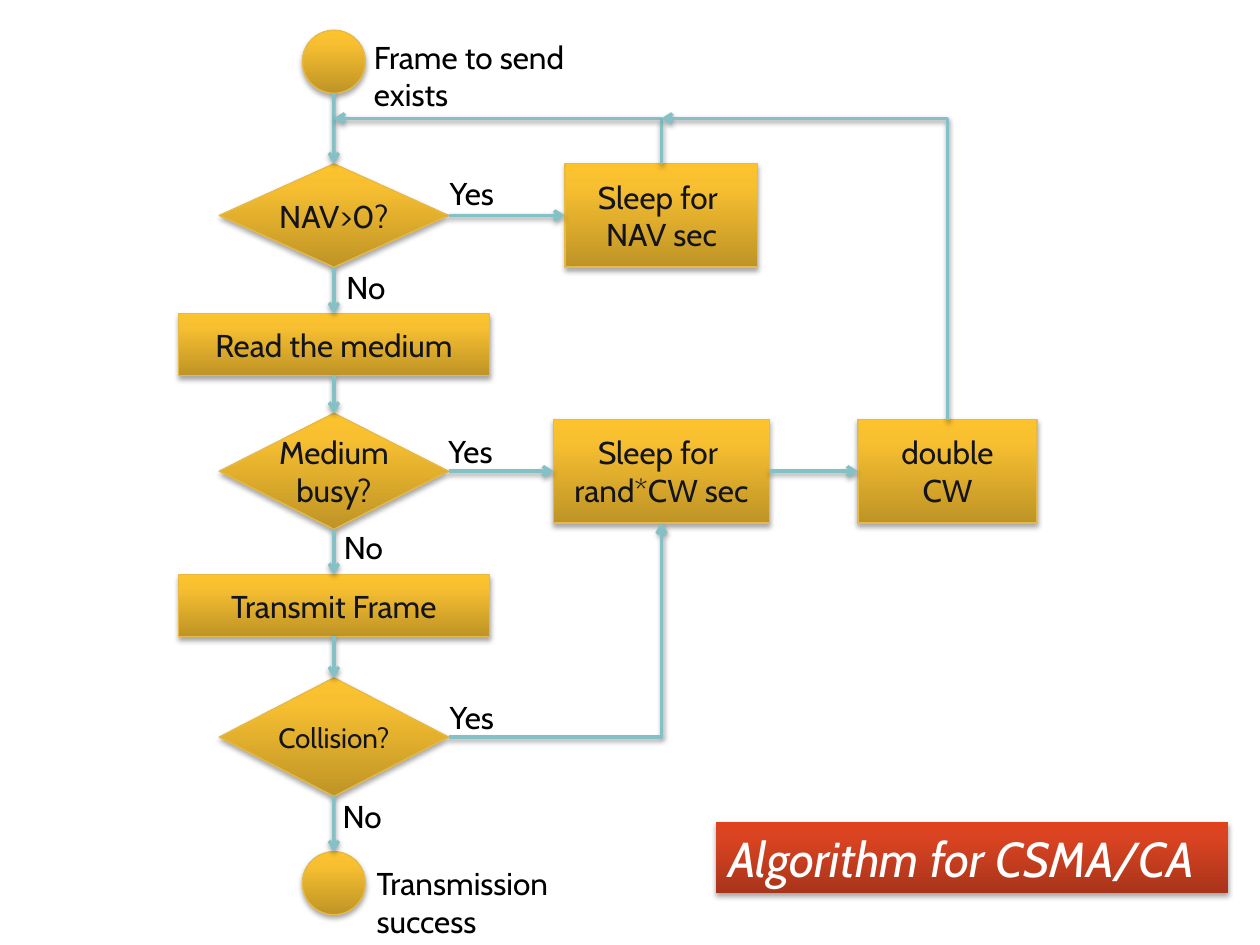
from copy import deepcopy
from dataclasses import dataclass

from lxml.etree import SubElement
from pptx import Presentation
from pptx.dml.color import RGBColor
from pptx.enum.shapes import MSO_CONNECTOR, MSO_SHAPE
from pptx.enum.text import MSO_ANCHOR, MSO_AUTO_SIZE, PP_ALIGN
from pptx.oxml.ns import qn
from pptx.util import Inches, Pt

TOP, LEFT, BOTTOM, RIGHT = range(4)
MAIN_X, SLEEP_X, DOUBLE_X = 2.65, 5.25, 7.52
RETURN_Y = 0.94
GOLD = [("BF9426", 0), ("F8C031", 0.8), ("FDC32D", 1)]
RED = [("A9341A", 0), ("DB4422", 0.8), ("E0421E", 1)]
TEAL, GOLD_EDGE, INK, BLACK, WHITE = "83C1C6", "E7BA45", "13141C", "000000", "FFFFFF"

CIRCLE = MSO_SHAPE.FLOWCHART_CONNECTOR
DECISION = MSO_SHAPE.FLOWCHART_DECISION
PROCESS = MSO_SHAPE.FLOWCHART_PROCESS


@dataclass
class Node:
    name: str
    kind: MSO_SHAPE
    center_x: float
    top: float
    width: float
    height: float
    lines: tuple = ()
    size: int = 18


@dataclass
class Label:
    text: str
    left: float
    top: float
    width: float
    wrap: bool = False


NODES = [
    Node("start", CIRCLE, MAIN_X, 0.24, 0.5, 0.5),
    Node("nav", DECISION, MAIN_X, 1.3, 1.82, 0.82, ("NAV>0?",)),
    Node("sleep nav", PROCESS, SLEEP_X, 1.3, 1.53, 0.82, ("Sleep for ", "NAV sec")),
    Node("read", PROCESS, MAIN_X, 2.49, 2.47, 0.49, ("Read the medium",)),
    Node("busy", DECISION, MAIN_X, 3.28, 1.82, 0.92, ("Medium busy?",)),
    Node("double", PROCESS, DOUBLE_X, 3.33, 1.42, 0.82, ("double", "CW")),
    Node("sleep rand", PROCESS, SLEEP_X, 3.33, 1.71, 0.82, ("Sleep for ", "rand*CW sec")),
    Node("transmit", PROCESS, MAIN_X, 4.56, 2.47, 0.49, ("Transmit Frame",)),
    Node("collision", DECISION, MAIN_X, 5.38, 1.82, 0.94, ("Collision?",), 16),
    Node("end", CIRCLE, MAIN_X, 6.76, 0.5, 0.5),
]
MAIN_FLOW = ["start", "nav", "read", "busy", "transmit", "collision", "end"]
SIDE_FLOW = [("nav", "sleep nav"), ("busy", "sleep rand"), ("sleep rand", "double")]
LABELS = [
    Label("Frame to send exists", 2.87, 0.25, 2.13, True),
    Label("Transmission success", 2.89, 6.81, 2.13, True),
    Label("Yes", 3.47, 1.33, 0.56),
    Label("Yes", 3.46, 3.38, 0.56),
    Label("Yes", 3.47, 5.49, 0.56),
    Label("No", 2.65, 2.08, 0.51),
    Label("No", 2.63, 4.14, 0.51),
    Label("No", 2.62, 6.28, 0.51),
]


def rgb(value: str) -> RGBColor:
    return RGBColor.from_string(value)


def add_shadow(shape, opacity: int, distance: float) -> None:
    properties = shape._element.spPr
    effects = properties.find(qn("a:effectLst"))
    if effects is None:
        effects = SubElement(properties, qn("a:effectLst"))
    shadow = SubElement(effects, qn("a:outerShdw"), blurRad=str(Pt(3.1)),
                        dist=str(Pt(distance)), dir="5400000", rotWithShape="0")
    color = SubElement(shadow, qn("a:srgbClr"), val=BLACK)
    SubElement(color, qn("a:alpha"), val=str(opacity * 1000))


def style_block(shape, stops: list) -> None:
    """Give a shape its upward gradient and soft shadow."""
    fill = shape.fill
    fill.gradient()
    fill.gradient_angle = 90
    stop_list = shape._element.spPr.find(qn("a:gradFill")).find(qn("a:gsLst"))
    stop_list.append(deepcopy(stop_list[-1]))
    for stop, (color, position) in zip(fill.gradient_stops, stops):
        stop.color.rgb = rgb(color)
        stop.position = position
    shape.shadow.inherit = False
    add_shadow(shape, 35, 1.8)


def write(frame, lines: tuple, color: str, alignment, **formats) -> None:
    for index, line in enumerate(lines):
        paragraph = frame.add_paragraph() if index else frame.paragraphs[0]
        paragraph.alignment = alignment
        run = paragraph.add_run()
        run.text = line
        run.font.color.rgb = rgb(color)
        for name, value in {"name": "Cabin", "size": Pt(18), **formats}.items():
            setattr(run.font, name, value)


def add_node(slide, node: Node):
    shape = slide.shapes.add_shape(
        node.kind, Inches(node.center_x - node.width / 2), Inches(node.top),
        Inches(node.width), Inches(node.height))
    style_block(shape, GOLD)
    shape.line.color.rgb = rgb(GOLD_EDGE)
    shape.line.width = Pt(0.75)
    frame = shape.text_frame
    frame.word_wrap = True
    frame.vertical_anchor = MSO_ANCHOR.MIDDLE
    if node.kind == DECISION:
        frame.margin_left = frame.margin_right = 0
    write(frame, node.lines, INK, PP_ALIGN.CENTER, size=Pt(node.size))
    return shape


def add_label(slide, label: Label) -> None:
    box = slide.shapes.add_textbox(
        Inches(label.left), Inches(label.top), Inches(label.width), Inches(0.4))
    box.text_frame.word_wrap = label.wrap
    write(box.text_frame, (label.text,), BLACK, PP_ALIGN.LEFT)


def style_arrow(connector) -> None:
    connector.line.color.rgb = rgb(TEAL)
    connector.line.width = Pt(2)
    SubElement(connector.line._get_or_add_ln(), qn("a:tailEnd"), type="arrow")
    add_shadow(connector, 38, 1.6)


def add_arrow(slide, source, source_side: int, target, target_side: int) -> None:
    connector = slide.shapes.add_connector(
        MSO_CONNECTOR.STRAIGHT, source.left + source.width // 2,
        source.top + source.height, target.left, target.top)
    # A circle numbers its sites differently, so its bottom stays unjoined.
    if source.auto_shape_type != CIRCLE:
        connector.begin_connect(source, source_side)
    connector.end_connect(target, target_side)
    style_arrow(connector)


def add_elbow(slide, source, side: int, start: tuple, end: tuple, target=None) -> None:
    """Draw a one-corner arrow: up then left from a top, right then up from a side."""
    (x1, y1), (x2, y2) = start, end
    connector = slide.shapes.add_connector(
        MSO_CONNECTOR.ELBOW, Inches(x1), Inches(y1), Inches(x2), Inches(y2))
    connector.begin_connect(source, side)
    if target is not None:
        connector.end_connect(target, BOTTOM)
    properties = connector._element.spPr
    properties.find(qn("a:prstGeom")).set("prst", "bentConnector2")
    transform = properties.find(qn("a:xfrm"))
    transform.attrib.clear()
    transform.set("flipV", "1")
    width, height = abs(x2 - x1), abs(y2 - y1)
    if side == TOP:
        transform.set("rot", "16200000")
        width, height = height, width
    connector.left = Inches((x1 + x2 - width) / 2)
    connector.top = Inches((y1 + y2 - height) / 2)
    connector.width, connector.height = Inches(width), Inches(height)
    style_arrow(connector)


def add_title(slide) -> None:
    title = slide.shapes.title
    place = {"left": 5.68, "top": 6.52, "width": 4.07, "height": 0.57}
    for name, value in place.items():
        setattr(title, name, Inches(value))
    style_block(title, RED)
    frame = title.text_frame
    frame.auto_size = MSO_AUTO_SIZE.NONE
    frame.word_wrap = True
    frame.vertical_anchor = MSO_ANCHOR.MIDDLE
    write(frame, ("Algorithm for CSMA/CA",), WHITE, PP_ALIGN.LEFT,
          size=Pt(28), italic=True)


def main() -> None:
    presentation = Presentation()
    presentation.slide_width, presentation.slide_height = Inches(10), Inches(7.5)
    slide = presentation.slides.add_slide(presentation.slide_layouts[5])
    add_title(slide)
    shapes = {node.name: add_node(slide, node) for node in NODES}
    for source, target in zip(MAIN_FLOW, MAIN_FLOW[1:]):
        add_arrow(slide, shapes[source], BOTTOM, shapes[target], TOP)
    for source, target in SIDE_FLOW:
        add_arrow(slide, shapes[source], RIGHT, shapes[target], LEFT)
    add_elbow(slide, shapes["sleep nav"], TOP, (SLEEP_X, 1.3), (MAIN_X, RETURN_Y))
    add_elbow(slide, shapes["double"], TOP, (DOUBLE_X, 3.33), (SLEEP_X, RETURN_Y))
    add_elbow(slide, shapes["collision"], RIGHT, (3.56, 5.85), (SLEEP_X, 4.15),
              shapes["sleep rand"])
    for label in LABELS:
        add_label(slide, label)
    presentation.save("out.pptx")


if __name__ == "__main__":
    main()
